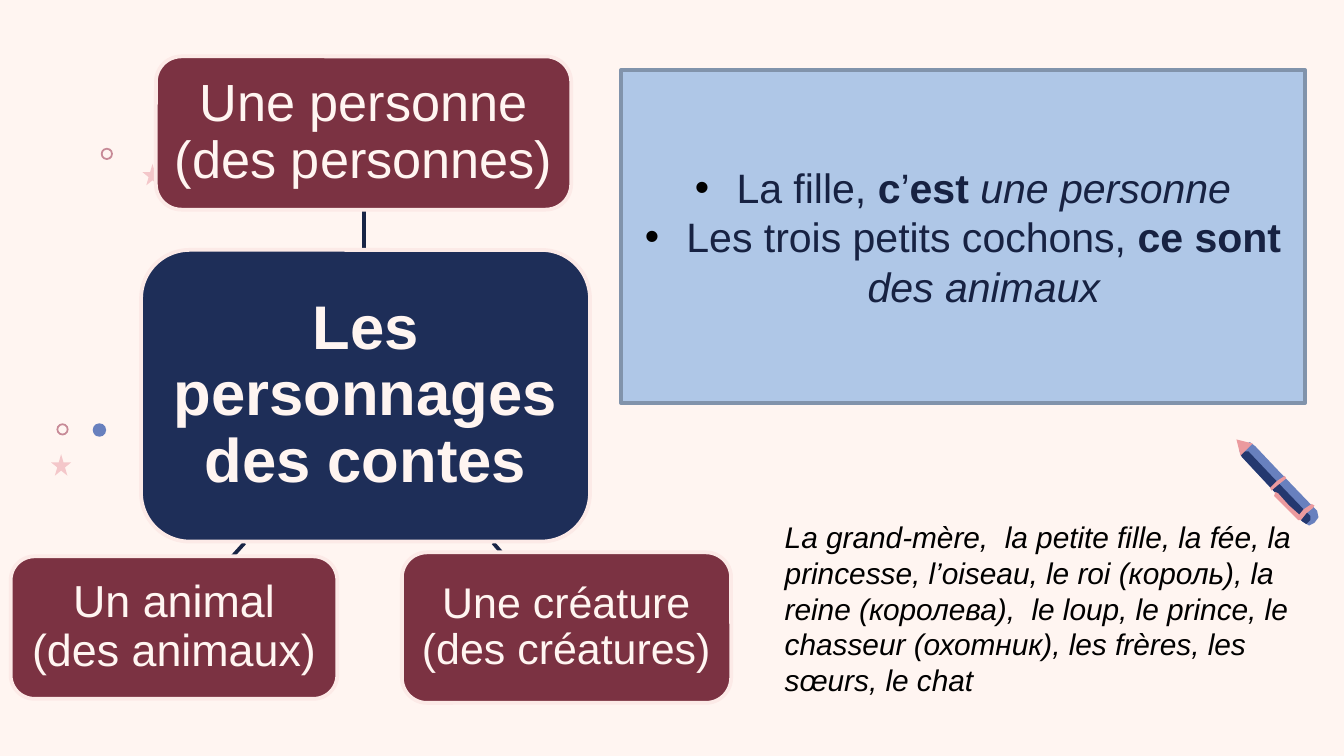
from lxml.etree import SubElement
from pptx import Presentation
from pptx.dml.color import RGBColor
from pptx.enum.shapes import MSO_CONNECTOR, MSO_SHAPE as Shape
from pptx.enum.text import MSO_ANCHOR as Anchor, PP_ALIGN as Align
from pptx.oxml.ns import qn
from pptx.util import Inches, Pt

CREAM = RGBColor(0xFF, 0xF5, 0xF1)
BLUSH = RGBColor(0xFC, 0xEA, 0xE7)
PINK = RGBColor(0xF4, 0xC7, 0xCA)
ROSE = RGBColor(0xC7, 0x8A, 0x97)
CORAL = RGBColor(0xEB, 0x9A, 0x9E)
BLUE = RGBColor(0x68, 0x80, 0xBE)
PEN_NAVY = RGBColor(0x24, 0x38, 0x6F)
NAVY = RGBColor(0x1E, 0x2E, 0x58)
LINE_NAVY = RGBColor(0x18, 0x25, 0x46)
TEXT_NAVY = RGBColor(0x17, 0x22, 0x42)
WINE = RGBColor(0x7B, 0x32, 0x42)
SKY = RGBColor(0xAF, 0xC7, 0xE7)
STEEL = RGBColor(0x81, 0x93, 0xAB)
BLACK = RGBColor(0, 0, 0)

# kind, left, top, width, height, colour
ORNAMENTS = [
    (Shape.STAR_5_POINT, 1.06, 1.22, 0.15, 0.16, PINK),
    (Shape.DONUT, 0.75, 1.1, 0.09, 0.09, ROSE),
    (Shape.STAR_5_POINT, 0.38, 3.38, 0.15, 0.16, PINK),
    (Shape.OVAL, 0.69, 3.15, 0.1, 0.1, BLUE),
    (Shape.DONUT, 0.42, 3.15, 0.09, 0.09, ROSE),
]

# colour, outline points
PEN_PARTS = [
    (BLUE, [(9.22, 3.35), (9.25, 3.31), (9.3, 3.29), (9.34, 3.32), (9.51, 3.5),
            (9.75, 3.75), (9.8, 3.8), (9.81, 3.85), (9.78, 3.89), (9.74, 3.91),
            (9.69, 3.88), (9.52, 3.7), (9.24, 3.4)]),
    (PEN_NAVY, [(9.23, 3.38), (9.25, 3.36), (9.29, 3.36), (9.46, 3.54), (9.7, 3.79),
                (9.75, 3.84), (9.75, 3.87), (9.72, 3.9), (9.69, 3.88), (9.52, 3.7),
                (9.24, 3.4)]),
    (CORAL, [(9.56, 3.54), (9.57, 3.56), (9.52, 3.6), (9.46, 3.65), (9.45, 3.63),
             (9.5, 3.58)]),
    (CORAL, [(9.76, 3.75), (9.78, 3.76), (9.77, 3.78), (9.72, 3.82), (9.68, 3.87),
             (9.65, 3.85), (9.7, 3.79)]),
    (CORAL, [(9.49, 3.66), (9.51, 3.67), (9.59, 3.76), (9.68, 3.84), (9.68, 3.87),
             (9.66, 3.87), (9.57, 3.78), (9.48, 3.69)]),
    (CORAL, [(9.2, 3.27), (9.32, 3.3), (9.23, 3.39)]),
]

BRANCHES = [((2.71, 1.86), (2.71, 1.56)),
            ((3.67, 4.04), (3.73, 4.11)),
            ((1.82, 4.04), (1.73, 4.14))]

# text, left, top, width, height, fill, inset, size, bold
NODES = [
    ("Les personnages des contes", 1.05, 1.86, 3.34, 2.17, NAVY, 0.09, 33, True),
    ("Une personne (des personnes)", 1.16, 0.42, 3.09, 1.14, WINE, 0.08, 28, False),
    ("Une créature (des créatures)", 2.99, 4.11, 2.45, 1.12, WINE, 0.06, 23, False),
    ("Un animal (des animaux)", 0.08, 4.14, 2.43, 1.06, WINE, 0.07, 24, False),
]

BOLD = {"bold": True}
ITALIC = {"italic": True}
EXAMPLES = [
    [("La fille, ", {}), ("c", BOLD), ("’", {}), ("est ", BOLD),
     ("une personne", ITALIC)],
    [("Les trois petits cochons, ", {}), ("ce sont ", BOLD),
     ("des animaux", ITALIC)],
]

WORDS = ("La grand-mère,  la petite fille, la fée, la princesse, l’oiseau, "
         "le roi (король), la reine (королева),  le loup, le prince, "
         "le chasseur (охотник), les frères, les sœurs, le chat")


def paint(s, fill, line=None):
    s.shadow.inherit = False
    s.fill.solid()
    s.fill.fore_color.rgb = fill
    if line is None:
        s.line.fill.background()
    else:
        s.line.color.rgb = line
        s.line.width = Pt(2)


def add_preset(slide, kind, box, fill, line=None):
    s = slide.shapes.add_shape(kind, *map(Inches, box))
    paint(s, fill, line)
    return s


def add_ornament(slide, kind, box, color):
    s = add_preset(slide, kind, box, color)
    if kind == Shape.DONUT:
        s.adjustments[0] = 0.15


def add_outline(slide, points, fill):
    first, *rest = [(Inches(x), Inches(y)) for x, y in points]
    builder = slide.shapes.build_freeform(*first)
    builder.add_line_segments(rest, close=True)
    paint(builder.convert_to_shape(), fill)


def add_line(slide, start, end):
    c = slide.shapes.add_connector(MSO_CONNECTOR.STRAIGHT,
                                   *map(Inches, (*start, *end)))
    c.line.color.rgb = LINE_NAVY
    c.line.width = Pt(2)
    SubElement(c._element.spPr, qn("a:effectLst"))


def add_run(p, text, size, color, **style):
    r = p.add_run()
    r.text = text
    r.font.color.rgb = color
    for name, value in {"name": "Arial", "size": Pt(size), **style}.items():
        setattr(r.font, name, value)


def add_bullet(p):
    pPr = p._p.get_or_add_pPr()
    pPr.set("marL", str(Inches(0.31)))
    pPr.set("indent", str(-Inches(0.31)))
    SubElement(SubElement(pPr, qn("a:buClr")), qn("a:srgbClr")).set("val", str(BLACK))
    SubElement(pPr, qn("a:buFont")).set("typeface", "Arial")
    SubElement(pPr, qn("a:buChar")).set("char", "•")


def add_node(slide, text, left, top, width, height, fill, inset, size, bold):
    s = add_preset(slide, Shape.ROUNDED_RECTANGLE, (left, top, width, height), fill, BLUSH)
    tf = s.text_frame
    tf.word_wrap = True
    tf.vertical_anchor = Anchor.MIDDLE
    for side in ("left", "top", "right", "bottom"):
        setattr(tf, f"margin_{side}", Inches(inset))
    p = tf.paragraphs[0]
    p.alignment = Align.CENTER
    p.line_spacing = 0.9
    add_run(p, text, size, CREAM, bold=bold)


def add_word_list(slide):
    tf = slide.shapes.add_textbox(*map(Inches, (5.74, 3.81, 4.32, 2.8))).text_frame
    tf.word_wrap = True
    add_run(tf.paragraphs[0], WORDS, 16, BLACK, italic=True)


def add_examples(slide):
    s = add_preset(slide, Shape.RECTANGLE, (4.62, 0.52, 5.09, 2.48), SKY, STEEL)
    tf = s.text_frame
    tf.word_wrap = True
    tf.vertical_anchor = Anchor.MIDDLE
    for i, runs in enumerate(EXAMPLES):
        p = tf.add_paragraph() if i else tf.paragraphs[0]
        p.alignment = Align.CENTER
        add_bullet(p)
        for text, style in runs:
            add_run(p, text, 22, TEXT_NAVY, **style)


def main():
    prs = Presentation()
    prs.slide_width = Inches(10)
    prs.slide_height = prs.slide_width * 9 // 16
    slide = prs.slides.add_slide(prs.slide_layouts[6])
    slide.background.fill.solid()
    slide.background.fill.fore_color.rgb = CREAM

    for kind, *box, color in ORNAMENTS:
        add_ornament(slide, kind, box, color)
    for color, points in PEN_PARTS:
        add_outline(slide, points, color)
    for start, end in BRANCHES:
        add_line(slide, start, end)
    for node in NODES:
        add_node(slide, *node)
    add_word_list(slide)
    add_examples(slide)
    prs.save("out.pptx")


if __name__ == "__main__":
    main()
